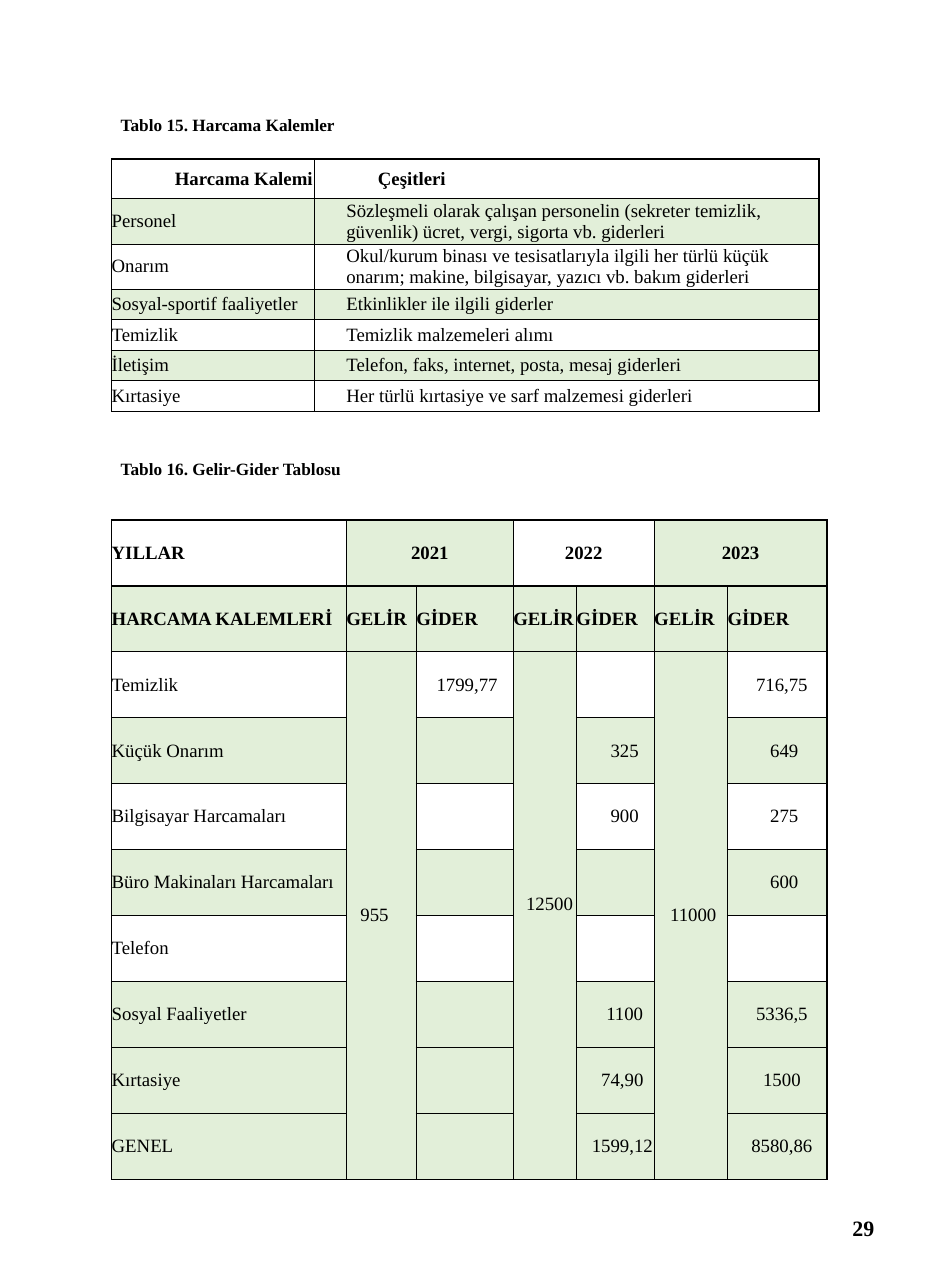
"""Builds the page with the expense items and the income and expense table."""
from lxml.etree import SubElement
from pptx import Presentation
from pptx.dml.color import RGBColor
from pptx.enum.text import MSO_ANCHOR as ANCHOR, PP_ALIGN as ALIGN
from pptx.oxml.ns import qn
from pptx.util import Pt

FONT, BLACK, WHITE, GREEN = "Times New Roman", "000000", "FFFFFF", "E2EFD9"

CAPTIONS = [
    ("Tablo 15. Harcama Kalemler", 69.12),
    ("Tablo 16. Gelir-Gider Tablosu", 288.72),
]
PAGE_NUMBER = "29"

EXPENSES = [
    ("Harcama Kalemi", "Çeşitleri"),
    ("Personel", "Sözleşmeli olarak çalışan personelin (sekreter temizlik, güvenlik) "
                 "ücret, vergi, sigorta vb. giderleri"),
    ("Onarım", "Okul/kurum binası ve tesisatlarıyla ilgili her türlü küçük onarım; "
               "makine, bilgisayar, yazıcı vb. bakım giderleri"),
    ("Sosyal-sportif faaliyetler", "Etkinlikler ile ilgili giderler"),
    ("Temizlik", "Temizlik malzemeleri alımı"),
    ("İletişim", "Telefon, faks, internet, posta, mesaj giderleri"),
    ("Kırtasiye", "Her türlü kırtasiye ve sarf malzemesi giderleri"),
]
EXPENSE_WIDTHS = [129.6, 321.84]
EXPENSE_HEIGHTS = [25.5, 28.8, 28.8, 19.5, 19.5, 19.5, 19.5]

YEARS = ["2021", "2022", "2023"]
BUDGET = [
    ("YILLAR", "2021", "", "2022", "", "2023", ""),
    ("HARCAMA KALEMLERİ",) + ("GELİR", "GİDER") * len(YEARS),
    ("Temizlik", "955", "1799,77", "12500", "", "11000", "716,75"),
    ("Küçük Onarım", "", "", "", "325", "", "649"),
    ("Bilgisayar Harcamaları", "", "", "", "900", "", "275"),
    ("Büro Makinaları Harcamaları", "", "", "", "", "", "600"),
    ("Telefon", "", "", "", "", "", ""),
    ("Sosyal Faaliyetler", "", "", "", "1100", "", "5336,5"),
    ("Kırtasiye", "", "", "", "74,90", "", "1500"),
    ("GENEL", "", "", "", "1599,12", "", "8580,86"),
]
BUDGET_WIDTHS = [149.76, 44.64, 61.92, 40.32, 49.68, 46.8, 63.36]
BUDGET_HEIGHT = 42.12
WHITE_ROWS = (2, 4, 6)
INCOME_COLUMNS = (1, 3, 5)
INDENTS = {"955": 9, "1799,77": 3, "12500": 6, "11000": 6, "716,75": 6,
           "325": 12, "900": 12, "649": 9, "275": 9, "600": 9, "1100": 12,
           "5336,5": 6, "74,90": 9, "1500": 6, "1599,12": 9, "8580,86": 6}
END_MARGINS = {"11000": (3, 0), "12500": (0, 14)}


def color(value):
    return RGBColor.from_string(value)


def write(text_frame, text, size, bold, align=ALIGN.LEFT):
    text_frame.text = text
    paragraph = text_frame.paragraphs[0]
    paragraph.alignment = align
    font = paragraph.font
    if paragraph.runs:
        font = paragraph.runs[0].font
    font.name, font.size, font.bold = FONT, Pt(size), bold
    font.color.rgb = color(BLACK)


def add_text(slide, text, box, size, margins, align=ALIGN.LEFT, anchor=ANCHOR.TOP):
    text_frame = slide.shapes.add_textbox(*map(Pt, box)).text_frame
    text_frame.word_wrap = True
    text_frame.vertical_anchor = anchor
    set_margins(text_frame, margins)
    write(text_frame, text, size, True, align)


def set_margins(target, margins):
    (target.margin_left, target.margin_top,
     target.margin_right, target.margin_bottom) = map(Pt, margins)


def add_table(slide, left, top, widths, heights):
    table = slide.shapes.add_table(len(heights), len(widths), Pt(left), Pt(top),
                                   Pt(sum(widths)), Pt(sum(heights))).table
    table.first_row = table.horz_banding = False
    for column, width in zip(table.columns, widths):
        column.width = Pt(width)
    for row, height in zip(table.rows, heights):
        row.height = Pt(height)
    return table


def set_borders(cell, widths):
    properties = cell._tc.get_or_add_tcPr()
    for side, width in zip("LRTB", widths):
        line = SubElement(properties, qn("a:ln" + side), w=str(Pt(width)))
        fill = SubElement(line, qn("a:solidFill"))
        SubElement(fill, qn("a:srgbClr"), val=BLACK)


def fill_cell(cell, text, shade, borders, margins, bold, align=ALIGN.LEFT):
    set_borders(cell, borders)
    cell.fill.solid()
    cell.fill.fore_color.rgb = color(shade)
    cell.vertical_anchor = ANCHOR.MIDDLE
    set_margins(cell, margins)
    write(cell.text_frame, text, 12, bold, align)


def add_expenses(slide):
    table = add_table(slide, 71.28, 101.52, EXPENSE_WIDTHS, EXPENSE_HEIGHTS)
    last = len(EXPENSES) - 1
    for row, texts in enumerate(EXPENSES):
        for column, text in enumerate(texts):
            outer = (column == 0, column == 1, row == 0, row == last)
            borders = [1 if edge else 0.75 for edge in outer]
            indent = 40.32 if row == 0 else 20.16 * column
            fill_cell(table.cell(row, column), text, GREEN if row % 2 else WHITE,
                      borders, (indent, 0, 0, 0), row == 0)


def budget_shade(row, column):
    if row == 0:
        return GREEN if column in (1, 2, 5, 6) else WHITE
    if row in WHITE_ROWS and column not in INCOME_COLUMNS:
        return WHITE
    return GREEN


def add_budget(slide):
    last = len(BUDGET) - 1
    table = add_table(slide, 71.28, 331.92, BUDGET_WIDTHS, [BUDGET_HEIGHT] * len(BUDGET))
    for column in INCOME_COLUMNS:
        table.cell(0, column).merge(table.cell(0, column + 1))
        table.cell(2, column).merge(table.cell(last, column))
    for row, texts in enumerate(BUDGET):
        for column, text in enumerate(texts):
            right, bottom = END_MARGINS.get(text, (0, 0))
            margins = (INDENTS.get(text, 0), 0, right, bottom)
            is_left = column == 0 or row == 1 or text == "955"
            fill_cell(table.cell(row, column), text, budget_shade(row, column),
                      [1] * 4, margins, row < 2, ALIGN.LEFT if is_left else ALIGN.CENTER)


def main():
    presentation = Presentation()
    presentation.slide_width, presentation.slide_height = Pt(595.44), Pt(822.24)
    slide = presentation.slides.add_slide(presentation.slide_layouts[6])
    for text, top in CAPTIONS:
        add_text(slide, text, (22.32, top, 490, 20.88), 11, (54.72, 3.6, 7.2, 3.6))
    add_expenses(slide)
    add_budget(slide)
    add_text(slide, PAGE_NUMBER, (426.96, 761.76, 138.96, 43.92), 14,
             (7.92, 4.32, 7.92, 4.32), ALIGN.RIGHT, ANCHOR.MIDDLE)
    presentation.save("out.pptx")


if __name__ == "__main__":
    main()
